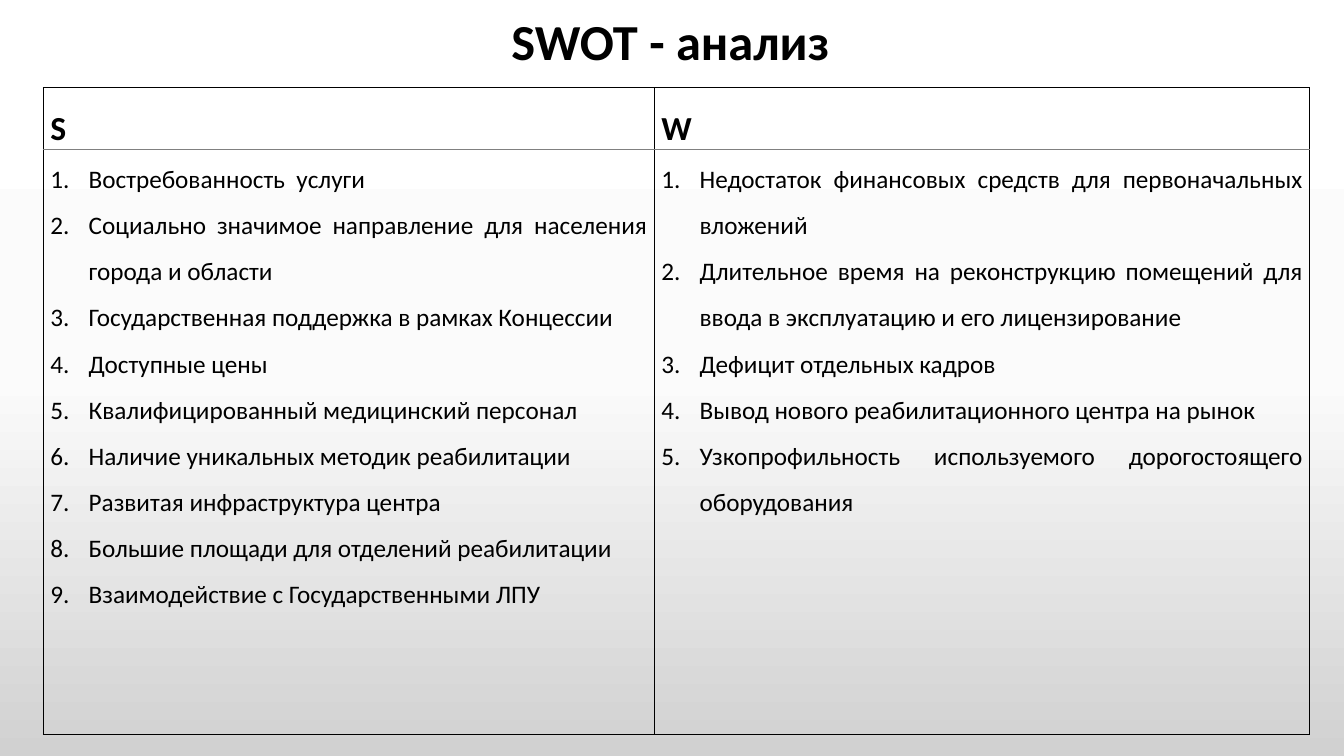
from copy import deepcopy

from lxml.etree import SubElement
from pptx import Presentation
from pptx.dml.color import RGBColor
from pptx.enum.text import MSO_ANCHOR as Anchor, PP_ALIGN as Align
from pptx.oxml import parse_xml
from pptx.oxml.ns import nsdecls, qn
from pptx.util import Inches, Pt

BLACK = RGBColor(0x00, 0x00, 0x00)
GREY = RGBColor(0x80, 0x80, 0x80)
BACKDROP = [
    (0, RGBColor(0xFF, 0xFF, 0xFF)),
    (0.5, RGBColor(0xFB, 0xFB, 0xFB)),
    (1, RGBColor(0xD1, 0xD1, 0xD1)),
]

TITLE_FONT = {"name": "Calibri", "size": Pt(36), "bold": True}
HEADING_FONT = {"name": "Calibri", "size": Pt(24), "bold": True}
ITEM_FONT = {"name": "Calibri", "size": Pt(18), "bold": False}
CELL_FORMAT = {"margin_left": Inches(0.07), "margin_right": Inches(0.07),
               "margin_top": 0, "margin_bottom": 0}
CELL_PARAGRAPH = {"alignment": Align.JUSTIFY, "line_spacing": 1.5}

COLUMN_WIDTHS = (6.06, 6.5)
ROW_HEIGHTS = (0.59, 5.81)

SWOT = {
    "S": [
        "Востребованность  услуги",
        "Социально значимое направление для населения города и области",
        "Государственная поддержка в рамках Концессии",
        "Доступные цены",
        "Квалифицированный медицинский персонал",
        "Наличие уникальных методик реабилитации",
        "Развитая инфраструктура центра",
        "Большие площади для отделений реабилитации",
        "Взаимодействие с Государственными ЛПУ",
    ],
    "W": [
        "Недостаток финансовых средств для первоначальных вложений",
        "Длительное время на реконструкцию помещений для ввода в эксплуатацию и его лицензирование",
        "Дефицит отдельных кадров",
        "Вывод нового реабилитационного центра на рынок",
        "Узкопрофильность используемого дорогостоящего оборудования",
    ],
}


def apply_format(target, values):
    for attribute, value in values.items():
        setattr(target, attribute, value)


def paint_background(slide):
    fill = slide.background.fill
    fill.gradient()
    fill.gradient_angle = 270
    # The default gradient has two stops; add the middle one
    stop_list = slide.background._cSld.find(".//" + qn("a:gsLst"))
    stop_list.append(deepcopy(stop_list[0]))
    for stop, (position, color) in zip(fill.gradient_stops, BACKDROP):
        stop.position = position
        stop.color.rgb = color


def write_paragraph(paragraph, text, font, layout):
    run = paragraph.add_run()
    run.text = text
    apply_format(run.font, font)
    run.font.color.rgb = BLACK
    apply_format(paragraph, layout)


def number_paragraph(paragraph):
    properties = paragraph._p.get_or_add_pPr()
    properties.set("marL", str(Inches(0.38)))
    properties.set("indent", str(-Inches(0.38)))
    SubElement(properties, qn("a:buFont"), typeface="+mj-lt")
    SubElement(properties, qn("a:buAutoNum"), type="arabicPeriod")


def set_borders(cell, top, bottom):
    sides = {"lnL": BLACK, "lnR": BLACK, "lnT": top, "lnB": bottom}
    properties = cell._tc.get_or_add_tcPr()
    for index, (side, color) in enumerate(sides.items()):
        properties.insert(index, parse_xml(
            f'<a:{side} {nsdecls("a")} w="{Pt(1)}"><a:solidFill>'
            f'<a:srgbClr val="{color}"/></a:solidFill></a:{side}>'))


def format_cell(cell, top, bottom):
    apply_format(cell, CELL_FORMAT)
    cell.fill.background()
    set_borders(cell, top, bottom)


def add_title(slide):
    title = slide.shapes.title
    apply_format(title, {"left": Inches(0.9), "top": 0,
                         "width": Inches(11.5), "height": Inches(0.87)})
    title.text_frame.vertical_anchor = Anchor.MIDDLE
    write_paragraph(title.text_frame.paragraphs[0], "SWOT - анализ", TITLE_FONT,
                    {"alignment": Align.CENTER, "line_spacing": 0.9})


def add_swot_table(slide):
    table = slide.shapes.add_table(
        len(ROW_HEIGHTS), len(COLUMN_WIDTHS), Inches(0.43), Inches(0.87),
        Inches(sum(COLUMN_WIDTHS)), Inches(sum(ROW_HEIGHTS))).table
    apply_format(table, {"first_row": False, "horz_banding": False})
    for column, width in zip(table.columns, COLUMN_WIDTHS):
        column.width = Inches(width)
    for row, height in zip(table.rows, ROW_HEIGHTS):
        row.height = Inches(height)

    for column, (letter, items) in enumerate(SWOT.items()):
        # Heading letter
        heading = table.cell(0, column)
        format_cell(heading, BLACK, GREY)
        write_paragraph(heading.text_frame.paragraphs[0], letter,
                        HEADING_FONT, CELL_PARAGRAPH)
        # Numbered list
        factors = table.cell(1, column)
        format_cell(factors, GREY, BLACK)
        frame = factors.text_frame
        for index, item in enumerate(items):
            paragraph = frame.add_paragraph() if index else frame.paragraphs[0]
            write_paragraph(paragraph, item, ITEM_FONT, CELL_PARAGRAPH)
            number_paragraph(paragraph)


def main():
    presentation = Presentation()
    apply_format(presentation, {"slide_width": Inches(13.33),
                                "slide_height": Inches(7.5)})
    slide = presentation.slides.add_slide(presentation.slide_layouts[5])
    paint_background(slide)
    add_title(slide)
    add_swot_table(slide)
    presentation.save("out.pptx")


if __name__ == "__main__":
    main()
